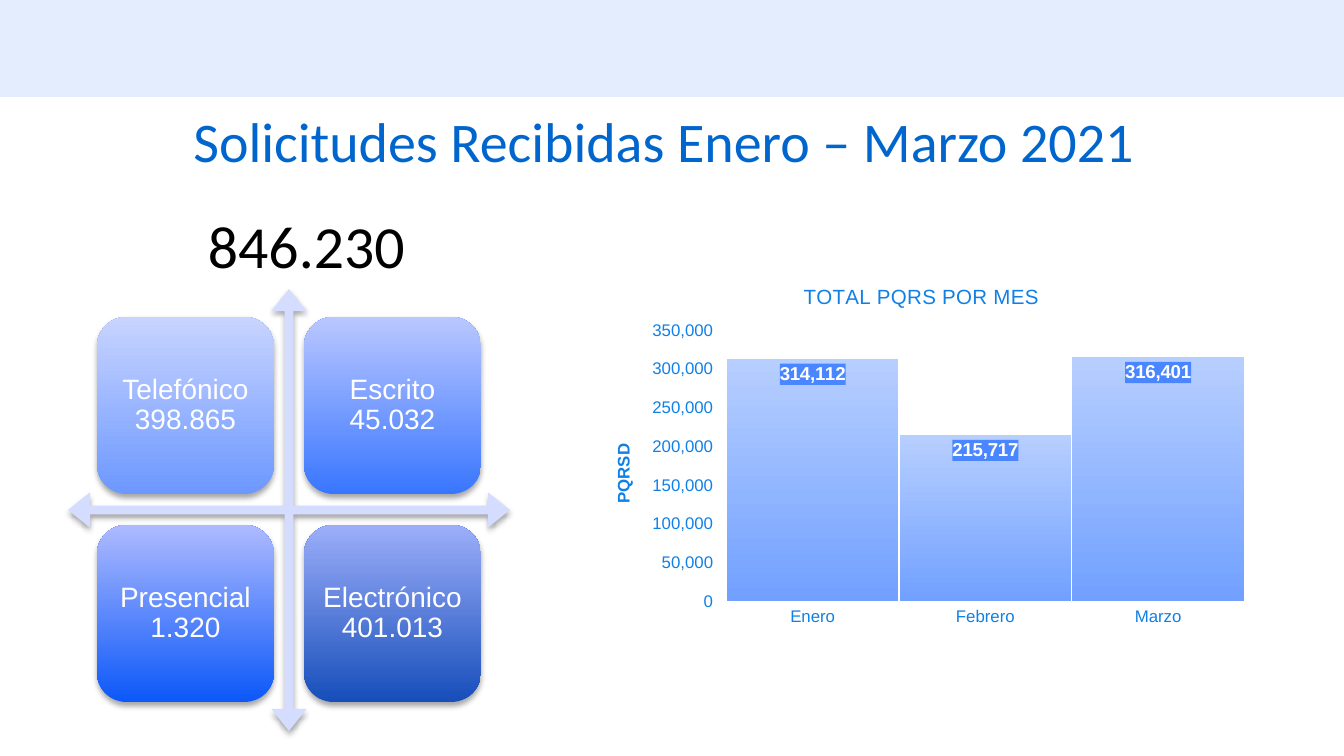
from lxml.etree import SubElement
from pptx import Presentation
from pptx.chart.data import CategoryChartData
from pptx.dml.color import RGBColor
from pptx.enum.chart import XL_CHART_TYPE, XL_LABEL_POSITION, XL_TICK_MARK
from pptx.enum.shapes import MSO_SHAPE
from pptx.enum.text import MSO_ANCHOR, PP_ALIGN
from pptx.oxml import parse_xml
from pptx.oxml.ns import nsdecls, qn
from pptx.util import Pt

PX = 914400 / 134.4
BAND = RGBColor(0xE4, 0xED, 0xFE)
TITLE = RGBColor(0x00, 0x66, 0xCD)
ARROW = RGBColor(0xD4, 0xDD, 0xFF)
AXIS = RGBColor(0x10, 0x80, 0xE7)
WHITE = RGBColor(0xFF, 0xFF, 0xFF)
BLACK = RGBColor(0x00, 0x00, 0x00)
BAR_TOP = RGBColor(0xB7, 0xCF, 0xFF)
BAR_BOTTOM = RGBColor(0x71, 0xA0, 0xFF)
LABEL_FILL = RGBColor(0x4A, 0x86, 0xFF)
CHANNELS = [
    ("Telefónico 398.865", RGBColor(0x6D, 0x98, 0xFF), RGBColor(0xC8, 0xD4, 0xFF)),
    ("Escrito 45.032", RGBColor(0x39, 0x76, 0xFF), RGBColor(0xBA, 0xC7, 0xFF)),
    ("Presencial 1.320", RGBColor(0x0C, 0x58, 0xF9), RGBColor(0xAE, 0xBA, 0xFF)),
    ("Electrónico 401.013", RGBColor(0x17, 0x4E, 0xBA), RGBColor(0x9C, 0xAE, 0xFA)),
]


def px(*values):
    return [round(v * PX) for v in values]


def style(font, size, color, name="Arial", bold=False):
    font.size, font.name, font.bold = Pt(size), name, bold
    font.color.rgb = color


prs = Presentation()
prs.slide_width, prs.slide_height = px(1344, 756)
s = prs.slides.add_slide(prs.slide_layouts[5])

band = s.shapes.add_shape(MSO_SHAPE.RECTANGLE, *px(0, 0, 1344, 97))
band.shadow.inherit = False
band.fill.solid()
band.fill.fore_color.rgb = BAND
band.line.fill.background()

title = s.shapes.title
title.left, title.top, title.width, title.height = px(38, 112, 1252, 64)
tf = title.text_frame
tf.text = "Solicitudes Recibidas Enero – Marzo 2021"
tf.vertical_anchor = MSO_ANCHOR.MIDDLE
tf.margin_left, tf.margin_right, tf.margin_top, tf.margin_bottom = px(9, 9, 5, 5)
p = tf.paragraphs[0]
p.alignment, p.line_spacing = PP_ALIGN.CENTER, 0.9
style(p.runs[0].font, 30, TITLE, "Calibri")

arrow = s.shapes.add_shape(MSO_SHAPE.QUAD_ARROW, *px(68, 289, 442, 442))
for i, value in enumerate((0.02, 0.04, 0.05)):
    arrow.adjustments[i] = value
arrow.fill.solid()
arrow.fill.fore_color.rgb = ARROW

diagram = [arrow]
for i, (text, bottom, top) in enumerate(CHANNELS):
    row, col = divmod(i, 2)
    sp = s.shapes.add_shape(MSO_SHAPE.ROUNDED_RECTANGLE, *px(97 + col * 207, 317 + row * 208, 177, 177))
    sp.fill.gradient()
    sp.fill.gradient_angle = 90
    for stop, color in zip(sp.fill.gradient_stops, (bottom, top)):
        stop.color.rgb = color
    tf = sp.text_frame
    tf.word_wrap = True
    tf.vertical_anchor = MSO_ANCHOR.MIDDLE
    tf.margin_left, tf.margin_right, tf.margin_top, tf.margin_bottom = px(6, 6, 6, 6)
    tf.text = text
    p = tf.paragraphs[0]
    p.alignment, p.line_spacing = PP_ALIGN.CENTER, 0.9
    style(p.runs[0].font, 15, WHITE)
    diagram.append(sp)

for sp in diagram:
    sp.line.fill.background()
    sp.shadow.inherit = False
    effects = sp.element.spPr.find(qn("a:effectLst"))
    shadow = SubElement(effects, qn("a:outerShdw"), blurRad=str(Pt(3.1)), dist=str(Pt(1.8)),
                        dir="5400000", rotWithShape="0")
    color = SubElement(shadow, qn("a:srgbClr"), val="000000")
    SubElement(color, qn("a:alpha"), val="35000")

data = CategoryChartData(number_format="#,##0")
data.categories = ["Enero", "Febrero", "Marzo"]
data.add_series("Series 1", (314112, 215717, 316401))
chart = s.shapes.add_chart(XL_CHART_TYPE.COLUMN_CLUSTERED, *px(585, 264, 673, 371), data).chart
chart.has_legend = False
style(chart.font, 10, AXIS)

chart.has_title = True
chart.chart_title.include_in_layout = False
chart.chart_title.text_frame.text = "TOTAL PQRS POR MES"
style(chart.chart_title.text_frame.paragraphs[0].runs[0].font, 11, AXIS)

for axis in (chart.category_axis, chart.value_axis):
    axis.has_major_gridlines = False
    axis.format.line.fill.background()
    style(axis.tick_labels.font, 9, AXIS)
chart.category_axis.major_tick_mark = XL_TICK_MARK.NONE
axis = chart.value_axis
axis.minimum_scale, axis.maximum_scale, axis.major_unit = 0, 350000, 50000
axis.tick_labels.number_format = "#,##0"
axis.tick_labels.number_format_is_linked = False
axis.axis_title.text_frame.text = "PQRSD"
style(axis.axis_title.text_frame.paragraphs[0].runs[0].font, 9, AXIS, bold=True)

plot = chart.plots[0]
plot.gap_width = 0
plot.vary_by_categories = False
series = plot.series[0]
fill = series.format.fill
fill.gradient()
fill.gradient_angle = 270
for stop, color in zip(fill.gradient_stops, (BAR_TOP, BAR_BOTTOM)):
    stop.color.rgb = color
series.format.line.color.rgb = WHITE
series.format.line.width = Pt(0.75)

labels = series.data_labels
labels.show_value = True
labels.position = XL_LABEL_POSITION.INSIDE_END
labels.number_format = "#,##0"
labels.number_format_is_linked = False
style(labels.font, 10, WHITE, bold=True)
label_text = chart.element.find(".//" + qn("c:dLbls") + "/" + qn("c:txPr"))
label_text.addprevious(parse_xml(
    f'<c:spPr {nsdecls("c", "a")}><a:solidFill><a:srgbClr val="{LABEL_FILL}"/></a:solidFill></c:spPr>'))

plot_area = chart.element.find(".//" + qn("c:plotArea"))
layout = plot_area.find(qn("c:layout"))
if layout is None:
    layout = parse_xml(f'<c:layout {nsdecls("c")}/>')
    plot_area.insert(0, layout)
manual = SubElement(layout, qn("c:manualLayout"))
for tag, value in (("layoutTarget", "inner"), ("xMode", "edge"), ("yMode", "edge"),
                   ("x", "0.21"), ("y", "0.18"), ("w", "0.77"), ("h", "0.73")):
    SubElement(manual, qn(f"c:{tag}"), val=value)

total = s.shapes.add_textbox(*px(193, 197, 227, 87))
tf = total.text_frame
tf.word_wrap = True
tf.text = "846.230"
p = tf.paragraphs[0]
p.alignment, p.line_spacing = PP_ALIGN.CENTER, 1.07
style(p.runs[0].font, 32, BLACK, "Calibri")

prs.save("out.pptx")
